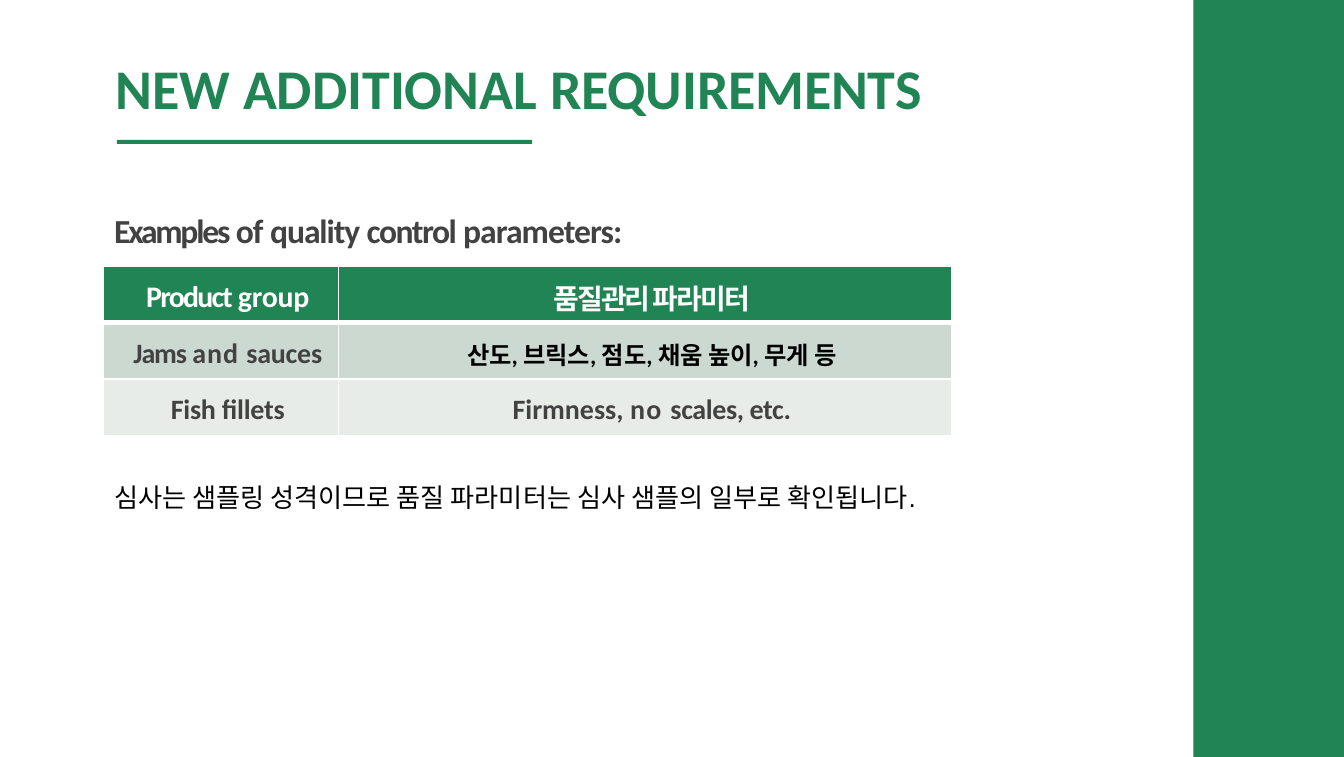
from lxml import etree
from pptx import Presentation
from pptx.dml.color import RGBColor
from pptx.enum.shapes import MSO_SHAPE
from pptx.enum.text import MSO_ANCHOR, MSO_AUTO_SIZE, PP_ALIGN
from pptx.oxml.ns import qn
from pptx.util import Inches, Pt

WIDTH, HEIGHT = 10, 5.63
GREEN, GREY, BLACK, WHITE = "208454", "424242", "000000", "FFFFFF"

# Text runs are (words, letter spacing in points)
TITLE = [("NEW ADDITIONAL ", 0), ("REQUIREMENTS", -0.1)]
SUBTITLE = [("Examples ", -1.2), ("of ", -0.5), ("quality ", -0.6),
            ("control ", -0.8), ("parameters:", -0.5)]
CONCLUSION = [("심사는 샘플링 성격이므로 품질 파라미터는 심사 샘플의 일부로 확인됩니다.", 0)]

# Each row is (fill, cells); each cell is (runs, size, colour)
PARAMETERS = [
    (GREEN, [([("Product ", -0.9), ("group", -0.1)], 16, WHITE),
             ([("품질관리 파라미터", -1.1)], 15, WHITE)]),
    ("CCD9D1", [([("Jams ", -0.6), ("and ", 0.5), ("sauces", -0.1)], 15, GREY),
                ([("산도, 브릭스, 점도, 채움 높이, 무게 등", 0)], 13, BLACK)]),
    ("E8ECE9", [([("Fish ", -0.1), ("fillets", -0.1)], 15, GREY),
                ([("Firmness, ", 0), ("no ", 0.7), ("scales, etc.", -0.2)], 15, GREY)]),
]
COLUMN_WIDTHS = [1.75, 4.56]
ROW_HEIGHT = 0.42
THIN, THICK = 1, 3


def color(value):
    return RGBColor.from_string(value)


def box(left, top, width, height):
    return [Inches(length) for length in (left, top, width, height)]


def add_bar(slide, *place):
    bar = slide.shapes.add_shape(MSO_SHAPE.RECTANGLE, *box(*place))
    bar.shadow.inherit = False
    bar.fill.solid()
    bar.fill.fore_color.rgb = color(GREEN)
    bar.line.fill.background()


def write(frame, runs, size, ink, font="Calibri", bold=True,
          align=PP_ALIGN.LEFT, indent=0.01, before=1):
    paragraph = frame.paragraphs[0]
    paragraph.alignment = align
    paragraph.space_before = Pt(before)
    properties = paragraph._p.get_or_add_pPr()
    properties.set("marL", str(Inches(indent)))
    properties.set("indent", "0")
    paragraph.font.size = Pt(size)
    paragraph.font.name = font
    paragraph.font.bold = bold
    paragraph.font.color.rgb = color(ink)
    for words, spacing in runs:
        run = paragraph.add_run()
        run.text = words
        run.font._element.set("spc", str(round(spacing * 100)))


def set_frame(frame, top_inset):
    frame.margin_left = frame.margin_right = frame.margin_bottom = 0
    frame.margin_top = Inches(top_inset)
    frame.vertical_anchor = MSO_ANCHOR.TOP
    frame.word_wrap = True
    frame.auto_size = MSO_AUTO_SIZE.NONE


def add_text(slide, place, top_inset, *content, **style):
    frame = slide.shapes.add_textbox(*box(*place)).text_frame
    set_frame(frame, top_inset)
    write(frame, *content, **style)


def set_borders(cell, widths):
    """Draw white borders; widths in points for left, right, top, bottom."""
    properties = cell._tc.get_or_add_tcPr()
    for position, (side, width) in enumerate(zip("LRTB", widths)):
        line = etree.Element(qn(f"a:ln{side}"), w=str(Pt(width)))
        fill = etree.SubElement(line, qn("a:solidFill"))
        etree.SubElement(fill, qn("a:srgbClr"), val=WHITE)
        properties.insert(position, line)


def add_parameter_table(slide, left, top):
    table = slide.shapes.add_table(
        len(PARAMETERS), len(COLUMN_WIDTHS),
        *box(left, top, sum(COLUMN_WIDTHS), ROW_HEIGHT * len(PARAMETERS))).table
    for column, width in zip(table.columns, COLUMN_WIDTHS):
        column.width = Inches(width)
    for number, (fill, cells) in enumerate(PARAMETERS):
        table.rows[number].height = Inches(ROW_HEIGHT)
        above = THICK if number == 1 else THIN
        below = THICK if number == 0 else THIN
        for cell, content in zip(table.rows[number].cells, cells):
            cell.fill.solid()
            cell.fill.fore_color.rgb = color(fill)
            cell.margin_left = cell.margin_right = cell.margin_bottom = 0
            cell.margin_top = Inches(0.04)
            cell.vertical_anchor = MSO_ANCHOR.MIDDLE
            set_borders(cell, (THIN, THIN, above, below))
            write(cell.text_frame, *content, align=PP_ALIGN.CENTER,
                  indent=0.1, before=2.9)


def main():
    presentation = Presentation()
    presentation.slide_width = Inches(WIDTH)
    presentation.slide_height = Inches(HEIGHT)
    slide = presentation.slides.add_slide(presentation.slide_layouts[5])

    sidebar = 1.12
    add_bar(slide, WIDTH - sidebar, 0, sidebar, HEIGHT)
    add_bar(slide, 0.87, 1.04, 3.09, 0.03)

    title = slide.shapes.title
    title.left, title.top, title.width, title.height = box(0.55, 0.28, 8.9, 0.98)
    set_frame(title.text_frame, 0.12)
    write(title.text_frame, TITLE, 30, GREEN, indent=0.31)

    margin = 0.84
    add_text(slide, (margin, 1.54, 4.2, 0.32), 0.02, SUBTITLE, 18, GREY)
    add_parameter_table(slide, 0.77, 1.98)
    add_text(slide, (margin, 3.57, 9.58, 0.25), 0.01, CONCLUSION, 14, BLACK,
             font="Arial", bold=False)
    presentation.save("out.pptx")


if __name__ == "__main__":
    main()
